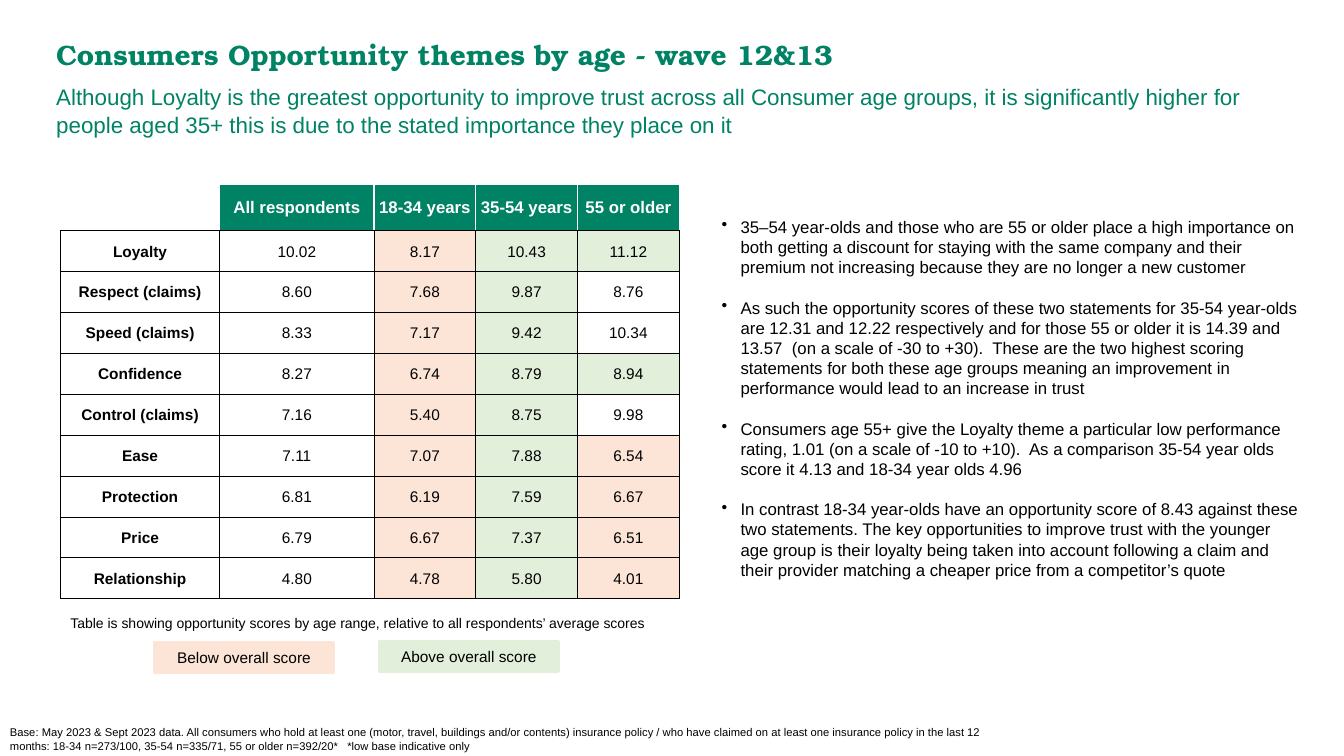
import pptx
import pptx.dml.color
import pptx.enum.shapes
import pptx.enum.text
import pptx.oxml.ns
import pptx.util
from lxml import etree

Pt = pptx.util.Pt
ALIGN = pptx.enum.text.PP_ALIGN
MIDDLE = pptx.enum.text.MSO_ANCHOR.MIDDLE

COLORS = {
    "green": "008265",
    "black": "000000",
    "white": "FFFFFF",
    "below": "FCE4D6",
    "above": "E2EFDA",
}

HEADERS = ["All respondents", "18-34 years", "35-54 years", "55 or older"]
SCORES = [
    ("Loyalty", 10.02, 8.17, 10.43, 11.12),
    ("Respect (claims)", 8.60, 7.68, 9.87, 8.76),
    ("Speed (claims)", 8.33, 7.17, 9.42, 10.34),
    ("Confidence", 8.27, 6.74, 8.79, 8.94),
    ("Control (claims)", 7.16, 5.40, 8.75, 9.98),
    ("Ease", 7.11, 7.07, 7.88, 6.54),
    ("Protection", 6.81, 6.19, 7.59, 6.67),
    ("Price", 6.79, 6.67, 7.37, 6.51),
    ("Relationship", 4.80, 4.78, 5.80, 4.01),
]
COLUMN_WIDTHS = [113.8, 110.2, 72.7, 72.7, 72.7]
HEADER_HEIGHT = 33
ROW_HEIGHT = 29.2

FINDINGS = [
    "35–54 year-olds and those who are 55 or older place a high importance on both getting a discount "
    "for staying with the same company and their premium not increasing because they are no longer a "
    "new customer",
    "As such the opportunity scores of these two statements for 35-54 year-olds are 12.31 and 12.22 "
    "respectively and for those 55 or older it is 14.39 and 13.57  (on a scale of -30 to +30).  These "
    "are the two highest scoring statements for both these age groups meaning an improvement in "
    "performance would lead to an increase in trust",
    "Consumers age 55+ give the Loyalty theme a particular low performance rating, 1.01 (on a scale of "
    "-10 to +10).  As a comparison 35-54 year olds score it 4.13 and 18-34 year olds 4.96",
    "In contrast 18-34 year-olds have an opportunity score of 8.43 against these two statements. The "
    "key opportunities to improve trust with the younger age group is their loyalty being taken into "
    "account following a claim and their provider matching a cheaper price from a competitor’s quote",
]


def rgb(name):
    return pptx.dml.color.RGBColor.from_string(COLORS[name])


def write(paragraph, text, size=11, color="black", font="Arial", bold=False,
          align=ALIGN.LEFT, line_spacing=1.0):
    paragraph.alignment = align
    paragraph.line_spacing = line_spacing
    run = paragraph.add_run()
    run.text = text
    run.font.size = Pt(size)
    run.font.name = font
    run.font.bold = bold
    run.font.color.rgb = rgb(color)


def add_text_frame(slide, left, top, width, height):
    text_box = slide.shapes.add_textbox(Pt(left), Pt(top), Pt(width), Pt(height))
    text_box.text_frame.word_wrap = True
    return text_box.text_frame


def add_label(slide, box, text, **text_format):
    write(add_text_frame(slide, *box).paragraphs[0], text, **text_format)


def add_heading(slide, left, top, width):
    add_label(slide, (left, top, width, 32), "Consumers Opportunity themes by age - wave 12&13",
              size=20, color="green", font="TeX Gyre Bonum", bold=True)
    add_label(slide, (left, top + 31.7, width, 46),
              "Although Loyalty is the greatest opportunity to improve trust across all Consumer age "
              "groups, it is significantly higher for people aged 35+ this is due to the stated "
              "importance they place on it",
              size=16, color="green", line_spacing=1.05)


def add_findings(slide, left, top, width, height):
    frame = add_text_frame(slide, left, top, width, height)
    frame.margin_left = frame.margin_top = frame.margin_right = frame.margin_bottom = 0
    for index, finding in enumerate(FINDINGS):
        paragraph = frame.add_paragraph() if index else frame.paragraphs[0]
        properties = paragraph._p.get_or_add_pPr()
        properties.set("marL", str(Pt(13.5)))
        properties.set("indent", str(-Pt(13.5)))
        bullet = etree.SubElement(properties, pptx.oxml.ns.qn("a:buChar"))
        bullet.set("char", "•")
        write(paragraph, finding, size=12, line_spacing=Pt(14.4))
        if index:
            paragraph.space_before = Pt(14.4)


def set_borders(cell, borders):
    """Draw each side given as tag: (colour name, width)."""
    properties = cell._tc.get_or_add_tcPr()
    for position, side in enumerate(("lnL", "lnR", "lnT", "lnB")):
        color, width = borders[side]
        line = etree.Element(pptx.oxml.ns.qn("a:" + side), w=str(Pt(width)))
        fill = etree.SubElement(line, pptx.oxml.ns.qn("a:solidFill"))
        etree.SubElement(fill, pptx.oxml.ns.qn("a:srgbClr"), val=COLORS[color])
        properties.insert(position, line)


def fill_cell(cell, text, fill, borders, **text_format):
    cell.margin_left = cell.margin_top = cell.margin_right = Pt(0.7)
    cell.margin_bottom = 0
    cell.vertical_anchor = MIDDLE
    cell.fill.solid()
    cell.fill.fore_color.rgb = rgb(fill)
    set_borders(cell, borders)
    if text:
        write(cell.text_frame.paragraphs[0], text, align=ALIGN.CENTER, **text_format)


def score_fill(theme, column, score, overall):
    """Compare with all respondents; claims scores of the oldest group have a low base."""
    low_base = column == len(HEADERS) and "(claims)" in theme
    if score == overall or low_base:
        return "white"
    return "above" if score > overall else "below"


def add_score_table(slide, left, top):
    height = HEADER_HEIGHT + ROW_HEIGHT * len(SCORES)
    frame = slide.shapes.add_table(len(SCORES) + 1, len(COLUMN_WIDTHS), Pt(left), Pt(top),
                                   Pt(sum(COLUMN_WIDTHS)), Pt(height))
    table = frame.table
    table.horz_banding = False
    for column, width in zip(table.columns, COLUMN_WIDTHS):
        column.width = Pt(width)
    for index, row in enumerate(table.rows):
        row.height = Pt(ROW_HEIGHT if index else HEADER_HEIGHT)

    grid = dict.fromkeys(("lnL", "lnR", "lnT", "lnB"), ("black", 0.5))
    header_borders = dict.fromkeys(grid, ("white", 1)) | {"lnB": ("black", 0.5)}
    for column, header in enumerate([""] + HEADERS):
        fill_cell(table.cell(0, column), header, "green" if header else "white",
                  header_borders, size=12, color="white", bold=True)
    for row, (theme, *scores) in enumerate(SCORES, start=1):
        fill_cell(table.cell(row, 0), theme, "white", grid, bold=True)
        for column, score in enumerate(scores, start=1):
            fill_cell(table.cell(row, column), f"{score:.2f}",
                      score_fill(theme, column, score, scores[0]), grid)


def add_legend(slide, left, top):
    add_label(slide, (left, top, 429, 44),
              "Table is showing opportunity scores by age range, relative to all respondents’ "
              "average scores", size=10)
    entries = [("Below overall score", "below", 67, 23), ("Above overall score", "above", 227.6, 22.4)]
    for text, color, offset_x, offset_y in entries:
        key = slide.shapes.add_shape(pptx.enum.shapes.MSO_SHAPE.RECTANGLE, Pt(left + offset_x),
                                     Pt(top + offset_y), Pt(128.2), Pt(21.6))
        key.shadow.inherit = False
        key.fill.solid()
        key.fill.fore_color.rgb = rgb(color)
        key.line.color.rgb = rgb(color)
        key.line.width = Pt(2)
        key.text_frame.vertical_anchor = MIDDLE
        key.text_frame.word_wrap = True
        write(key.text_frame.paragraphs[0], text, align=ALIGN.CENTER)


def add_base_note(slide, left, top, width, height):
    add_label(slide, (left, top, width, height),
              "Base: May 2023 & Sept 2023 data. All consumers who hold at least one (motor, travel, "
              "buildings and/or contents) insurance policy / who have claimed on at least one insurance "
              "policy in the last 12 months: 18-34 n=273/100, 35-54 n=335/71, 55 or older n=392/20*   "
              "*low base indicative only", size=8, line_spacing=1.05)


def main():
    presentation = pptx.Presentation()
    presentation.slide_width = Pt(960)
    presentation.slide_height = Pt(540)
    slide = presentation.slides.add_slide(presentation.slide_layouts[6])
    add_heading(slide, 33.1, 23, 892)
    add_score_table(slide, 43.2, 131.8)
    add_findings(slide, 515.5, 154.8, 414, 312.5)
    add_legend(slide, 43.2, 435.6)
    add_base_note(slide, 0, 514, 738, 26)
    presentation.save("out.pptx")


if __name__ == "__main__":
    main()
